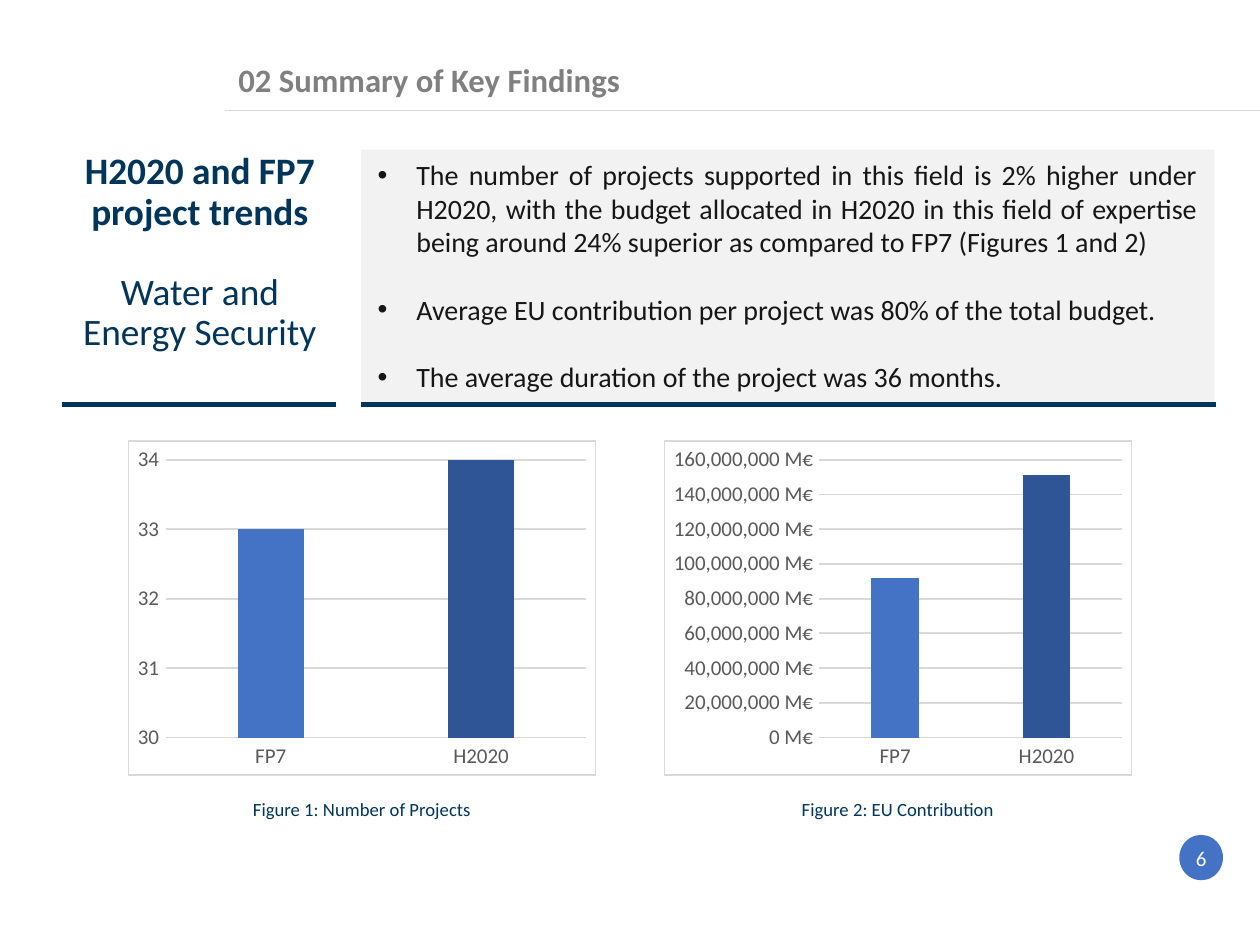
import pptx
import pptx.util
import pptx.chart.data
import pptx.dml.color
import pptx.enum.chart
import pptx.enum.shapes
import pptx.enum.text
import pptx.oxml
import pptx.oxml.ns

Inches = pptx.util.Inches
Pt = pptx.util.Pt
RGBColor = pptx.dml.color.RGBColor
Align = pptx.enum.text.PP_ALIGN
Anchor = pptx.enum.text.MSO_ANCHOR
Shape = pptx.enum.shapes.MSO_SHAPE
qn = pptx.oxml.ns.qn

NAVY = RGBColor(0x00, 0x35, 0x5A)
BLUE = RGBColor(0x44, 0x72, 0xC4)
DARK = RGBColor(0x2F, 0x55, 0x97)
GREY = RGBColor(0x80, 0x80, 0x80)
SLATE = RGBColor(0x59, 0x59, 0x59)
RULE = RGBColor(0xD9, 0xD9, 0xD9)
PANEL = RGBColor(0xF2, 0xF2, 0xF2)
INK = RGBColor(0x17, 0x16, 0x16)
WHITE = RGBColor(0xFF, 0xFF, 0xFF)

DRAW = 'xmlns:a="http://schemas.openxmlformats.org/drawingml/2006/main"'
FRAME = (
    '<c:spPr xmlns:c="http://schemas.openxmlformats.org/drawingml/2006/chart" '
    f'{DRAW}><a:solidFill><a:srgbClr val="{WHITE}"/></a:solidFill>'
    f'<a:ln w="9525"><a:solidFill><a:srgbClr val="{RULE}"/></a:solidFill></a:ln>'
    '</c:spPr>'
)
MARKS = (f'<a:buFont {DRAW} typeface="Arial"/>', f'<a:buChar {DRAW} char="•"/>')


class Page:
    font = "Calibri"

    def __init__(self, slide):
        self.slide = slide

    def style(self, font, size, color, bold=False):
        font.name = self.font
        font.size = Pt(size)
        font.bold = bold
        font.color.rgb = color

    def text(self, box, words, size, color, bold=False,
             align=Align.LEFT, anchor=Anchor.TOP, lead=None):
        shape = self.slide.shapes.add_textbox(*map(Inches, box))
        frame = shape.text_frame
        frame.word_wrap = True
        frame.vertical_anchor = anchor
        frame.text = words
        for para in frame.paragraphs:
            para.alignment = align
            para.line_spacing = lead
            self.style(para.runs[0].font, size, color, bold)
        return frame

    def shape(self, kind, box, fill):
        shape = self.slide.shapes.add_shape(kind, *map(Inches, box))
        shape.shadow.inherit = False
        shape.fill.solid()
        shape.fill.fore_color.rgb = fill
        shape.line.fill.background()
        return shape

    def bullets(self, box, items, size, gap):
        frame = self.shape(Shape.RECTANGLE, box, PANEL).text_frame
        frame.word_wrap = True
        frame.vertical_anchor = Anchor.TOP
        frame.text = "\n".join(items)
        for i, para in enumerate(frame.paragraphs):
            props = para._p.get_or_add_pPr()
            props.set("marL", str(Inches(0.23)))
            props.set("indent", str(-Inches(0.23)))
            for mark in MARKS:
                props.append(pptx.oxml.parse_xml(mark))
            para.alignment = Align.JUSTIFY
            if i:
                para.space_before = Pt(gap)
            self.style(para.runs[0].font, size, INK)

    def line(self, left, right, top, color, width):
        line = self.slide.shapes.add_connector(
            pptx.enum.shapes.MSO_CONNECTOR.STRAIGHT,
            Inches(left), Inches(top), Inches(right), Inches(top))
        line.line.color.rgb = color
        line.line.width = Pt(width)
        line._element.spPr.append(pptx.oxml.parse_xml(f"<a:effectLst {DRAW}/>"))

    def chart(self, box, values, form, scale=None):
        data = pptx.chart.data.CategoryChartData()
        data.categories = ["FP7", "H2020"]
        data.add_series("Series 1", values)
        chart = self.slide.shapes.add_chart(
            pptx.enum.chart.XL_CHART_TYPE.COLUMN_CLUSTERED,
            *map(Inches, box), data).chart
        chart.has_title = False
        chart.has_legend = False
        self.style(chart.font, 10, SLATE)
        chart._chartSpace.find(qn("c:chart")).addnext(pptx.oxml.parse_xml(FRAME))

        plot = chart.plots[0]
        plot.gap_width = 219
        plot.overlap = -27
        plot.vary_by_categories = False
        bars = plot.series[0]
        for part, color in ((bars, BLUE), (bars.points[1], DARK)):
            part.format.fill.solid()
            part.format.fill.fore_color.rgb = color

        base, side = chart.category_axis, chart.value_axis
        for axis in (base, side):
            axis.major_tick_mark = pptx.enum.chart.XL_TICK_MARK.NONE
            axis.minor_tick_mark = pptx.enum.chart.XL_TICK_MARK.NONE
            self.style(axis.tick_labels.font, 9, SLATE)
        side.has_major_gridlines = True
        for rule in (base.format.line, side.major_gridlines.format.line):
            rule.color.rgb = RULE
            rule.width = Pt(0.75)
        side.format.line.fill.background()
        side.tick_labels.number_format = form
        side.tick_labels.number_format_is_linked = False
        if scale:
            side.minimum_scale, side.maximum_scale, side.major_unit = scale


def main():
    deck = pptx.Presentation()
    deck.slide_width = Inches(7.5)
    deck.slide_height = deck.slide_width * 3 // 4
    page = Page(deck.slides.add_slide(deck.slide_layouts[6]))

    page.line(1.34, 7.5, 0.66, RULE, 0.5)
    page.text((1.32, 0.34, 3.52, 0.3), "02 Summary of Key Findings",
              14, GREY, bold=True, anchor=Anchor.MIDDLE, lead=0.9)

    topic = page.text(
        (0.32, 0.86, 1.74, 1.4),
        "H2020 and FP7\nproject trends\nWater and Energy Security",
        16, NAVY, bold=True, align=Align.CENTER, lead=0.9)
    field = topic.paragraphs[2]
    field.space_before = Pt(17)
    field.runs[0].font.bold = False

    page.bullets((2.15, 0.89, 5.08, 1.51), [
        "The number of projects supported in this field is 2% higher under "
        "H2020, with the budget allocated in H2020 in this field of expertise "
        "being around 24% superior as compared to FP7 (Figures 1 and 2)",
        "Average EU contribution per project was 80% of the total budget.",
        "The average duration of the project was 36 months.",
    ], 12, 14.5)
    page.line(0.37, 2, 2.41, NAVY, 2.25)
    page.line(2.15, 7.24, 2.41, NAVY, 2.25)

    page.chart((0.76, 2.62, 2.79, 2), (33, 34), "General", (30, 34, 1))
    page.chart((3.95, 2.62, 2.79, 2), (92000000, 151000000),
               "#,##0\\ [$M€-46E]")
    for left, words in ((0.39, "Figure 1: Number of Projects"),
                        (3.58, "Figure 2: EU Contribution")):
        page.text((left, 4.7, 3.53, 0.24), words, 8, NAVY, align=Align.CENTER)

    page.shape(Shape.OVAL, (7.02, 4.97, 0.26, 0.27), BLUE)
    page.text((5.59, 4.96, 1.69, 0.3), "6", 9, WHITE,
              align=Align.RIGHT, anchor=Anchor.MIDDLE)
    deck.save("out.pptx")


if __name__ == "__main__":
    main()
